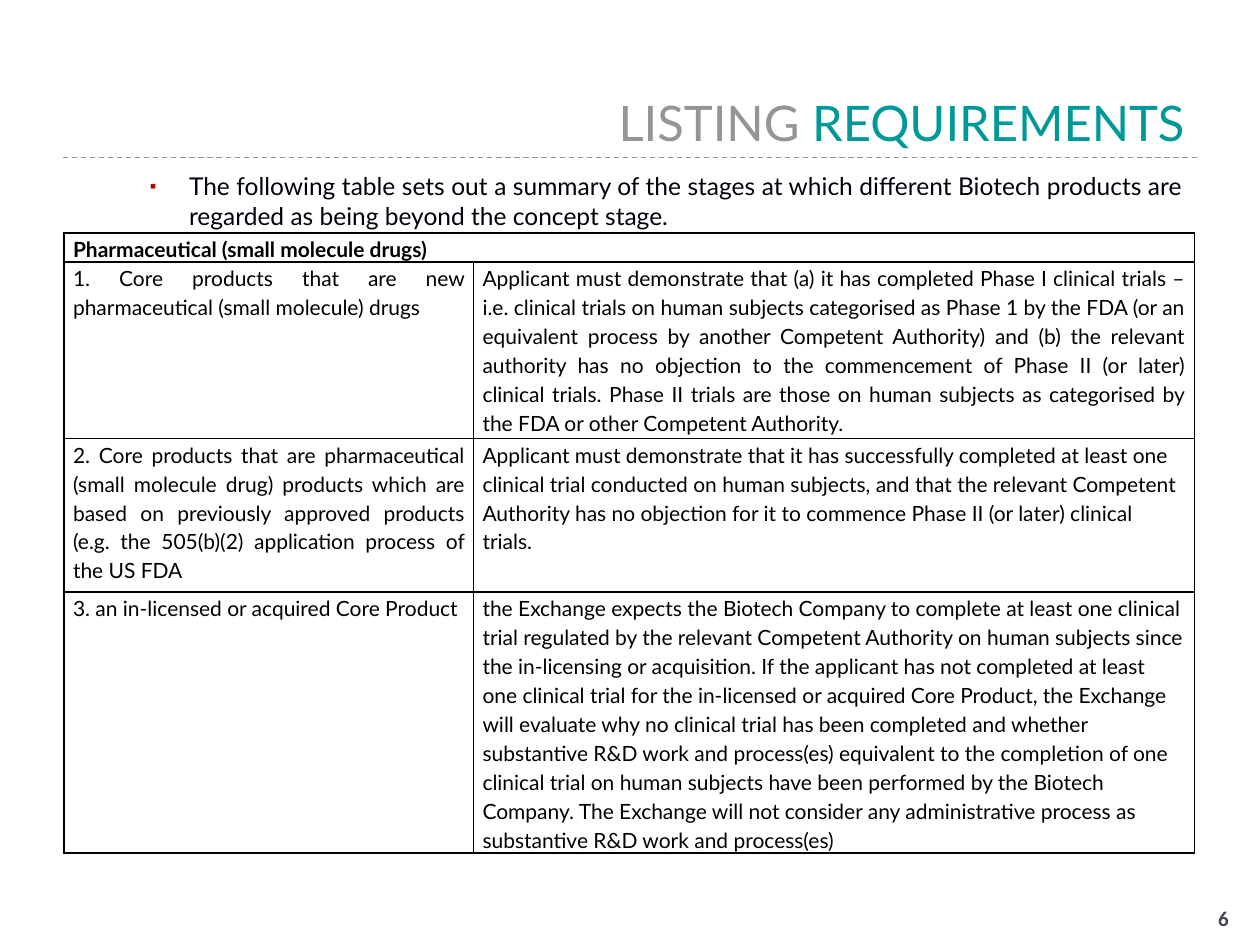
from dataclasses import dataclass
from typing import Any

from lxml.etree import SubElement
from pptx import Presentation
from pptx.dml.color import RGBColor
from pptx.enum.dml import MSO_LINE
from pptx.enum.shapes import MSO_CONNECTOR
from pptx.enum.text import MSO_ANCHOR, MSO_AUTO_SIZE, PP_ALIGN
from pptx.oxml.ns import qn
from pptx.util import Emu, Inches, Pt

COLORS = {
    "grey": "959595",
    "teal": "009999",
    "number": "464653",
    "bullet": "C00000",
    "body": "00000A",
    "black": "000000",
}
GRID_COLUMNS, GRID_ROWS = 100, 75
PAGE_WIDTH, PAGE_HEIGHT = Inches(10), Inches(7.5)


@dataclass(frozen=True)
class Area:
    column: float
    row: float
    columns: float
    rows: float

    def lengths(self) -> tuple[Emu, Emu, Emu, Emu]:
        return across(self.column), down(self.row), across(self.columns), down(self.rows)


@dataclass(frozen=True)
class Stage:
    product: str
    requirement: str
    rows: float
    requirement_align: PP_ALIGN = PP_ALIGN.LEFT


TITLE_AREA = Area(5, 1.7, 90, 10.8)
BODY_AREA = Area(5.9, 13.1, 89, 54.7)
NUMBER_AREA = Area(76.8, 71.4, 21.7, 2.4)
TABLE_AREA = Area(5.1, 18.5, 89.8, 46.8)
TABLE_COLUMNS = (32.5, 57.2)
HEADING = "Pharmaceutical (small molecule drugs)"
HEADING_ROWS = 1.8
STAGES = (
    Stage(
        "1. Core products that are new pharmaceutical (small molecule) drugs",
        "Applicant must demonstrate that (a) it has completed Phase I clinical trials – "
        "i.e. clinical trials on human subjects categorised as Phase 1 by the FDA (or an "
        "equivalent process by another Competent Authority) and (b) the relevant authority "
        "has no objection to the commencement of Phase II (or later) clinical trials. "
        "Phase II trials are those on human subjects as categorised by the FDA or other "
        "Competent Authority.",
        14,
        PP_ALIGN.JUSTIFY,
    ),
    Stage(
        "2. Core products that are pharmaceutical (small molecule drug) products which are "
        "based on previously approved products (e.g. the 505(b)(2) application process of "
        "the US FDA",
        "Applicant must demonstrate that it has successfully completed at least one clinical "
        "trial conducted on human subjects, and that the relevant Competent Authority has no "
        "objection for it to commence Phase II (or later) clinical trials.",
        12.2,
    ),
    Stage(
        "3. an in-licensed or acquired Core Product",
        "the Exchange expects the Biotech Company to complete at least one clinical trial "
        "regulated by the relevant Competent Authority on human subjects since the "
        "in-licensing or acquisition. If the applicant has not completed at least one "
        "clinical trial for the in-licensed or acquired Core Product, the Exchange will "
        "evaluate why no clinical trial has been completed and whether substantive R&D work "
        "and process(es) equivalent to the completion of one clinical trial on human subjects "
        "have been performed by the Biotech Company. The Exchange will not consider any "
        "administrative process as substantive R&D work and process(es)",
        12.2,
    ),
)


def across(columns: float) -> Emu:
    return Emu(round(PAGE_WIDTH * columns / GRID_COLUMNS))


def down(rows: float) -> Emu:
    return Emu(round(PAGE_HEIGHT * rows / GRID_ROWS))


def place(shape: Any, area: Area) -> None:
    shape.left, shape.top, shape.width, shape.height = area.lengths()


def style(font: Any, size: float, color: str, name: str = "Lato", bold: bool = False) -> None:
    font.size, font.name, font.bold = Pt(size), name, bold
    font.color.rgb = RGBColor.from_string(COLORS[color])


def draw_rule(page: Any) -> None:
    rule = page.shapes.add_connector(
        MSO_CONNECTOR.STRAIGHT, across(5), down(12.5), across(95), down(12.5)
    )
    rule.line.color.rgb = RGBColor.from_string(COLORS["grey"])
    rule.line.width = Pt(0.75)
    rule.line.dash_style = MSO_LINE.DASH
    SubElement(rule._element.spPr, qn("a:effectLst"))


def fill_title(title: Any) -> None:
    place(title, TITLE_AREA)
    title.text_frame.vertical_anchor = MSO_ANCHOR.BOTTOM
    title.text_frame.auto_size = MSO_AUTO_SIZE.NONE
    para = title.text_frame.paragraphs[0]
    para.alignment = PP_ALIGN.RIGHT
    for text, color in (("LISTING ", "grey"), ("REQUIREMENTS", "teal")):
        span = para.add_run()
        span.text = text
        style(span.font, 28, color)


def add_bullet(para: Any) -> None:
    properties = para._p.get_or_add_pPr()
    properties.set("marL", str(Inches(0.81)))
    properties.set("indent", str(Inches(-0.31)))
    color = SubElement(properties, qn("a:buClr"))
    SubElement(color, qn("a:srgbClr"), val=COLORS["bullet"])
    SubElement(properties, qn("a:buSzPct"), val="76000")
    SubElement(properties, qn("a:buChar"), char="▪")
    tabs = SubElement(properties, qn("a:tabLst"))
    SubElement(tabs, qn("a:tab"), pos=str(Inches(0.5)), algn="l")


def fill_body(body: Any) -> None:
    place(body, BODY_AREA)
    body.text_frame.auto_size = MSO_AUTO_SIZE.NONE
    para = body.text_frame.paragraphs[0]
    para.text = (
        "The following table sets out a summary of the stages at which different Biotech "
        "products are regarded as being beyond the concept stage."
    )
    para.level = 1
    para.alignment = PP_ALIGN.JUSTIFY
    para.space_before, para.space_after = Pt(0), Pt(10)
    add_bullet(para)
    style(para.font, 14, "body")


def draw_number(page: Any) -> None:
    box = page.shapes.add_textbox(*NUMBER_AREA.lengths())
    box.text_frame.word_wrap = True
    para = box.text_frame.paragraphs[0]
    para.text = "6"
    para.alignment = PP_ALIGN.RIGHT
    style(para.font, 12, "number", "Calibri", True)


def fill_cell(cell: Any, text: str, align: PP_ALIGN, bold: bool = False) -> None:
    cell.margin_left = cell.margin_right = across(0.7)
    cell.margin_top = cell.margin_bottom = 0
    para = cell.text_frame.paragraphs[0]
    para.text = text
    para.alignment = align
    para.line_spacing = 1.15
    style(para.font, 12, "black", bold=bold)


def border_cell(cell: Any) -> None:
    properties = cell._tc.get_or_add_tcPr()
    for side in ("lnL", "lnR", "lnT", "lnB"):
        edge = SubElement(properties, qn(f"a:{side}"), w=str(Pt(1)))
        fill = SubElement(edge, qn("a:solidFill"))
        SubElement(fill, qn("a:srgbClr"), val=COLORS["black"])
    cell.fill.background()


def draw_table(page: Any) -> None:
    table = page.shapes.add_table(
        len(STAGES) + 1, len(TABLE_COLUMNS), *TABLE_AREA.lengths()
    ).table
    for column, columns in zip(table.columns, TABLE_COLUMNS):
        column.width = across(columns)
    for row, rows in zip(table.rows, (HEADING_ROWS, *(stage.rows for stage in STAGES))):
        row.height = down(rows)
    for cell in table.iter_cells():
        border_cell(cell)
    table.cell(0, 0).merge(table.cell(0, 1))
    fill_cell(table.cell(0, 0), HEADING, PP_ALIGN.LEFT, True)
    for index, stage in enumerate(STAGES, 1):
        fill_cell(table.cell(index, 0), stage.product, PP_ALIGN.JUSTIFY)
        fill_cell(table.cell(index, 1), stage.requirement, stage.requirement_align)


def main() -> None:
    deck = Presentation()
    deck.slide_width, deck.slide_height = PAGE_WIDTH, PAGE_HEIGHT
    page = deck.slides.add_slide(deck.slide_layouts[1])
    draw_rule(page)
    fill_title(page.shapes.title)
    draw_number(page)
    fill_body(page.placeholders[1])
    draw_table(page)
    deck.save("out.pptx")


if __name__ == "__main__":
    main()
